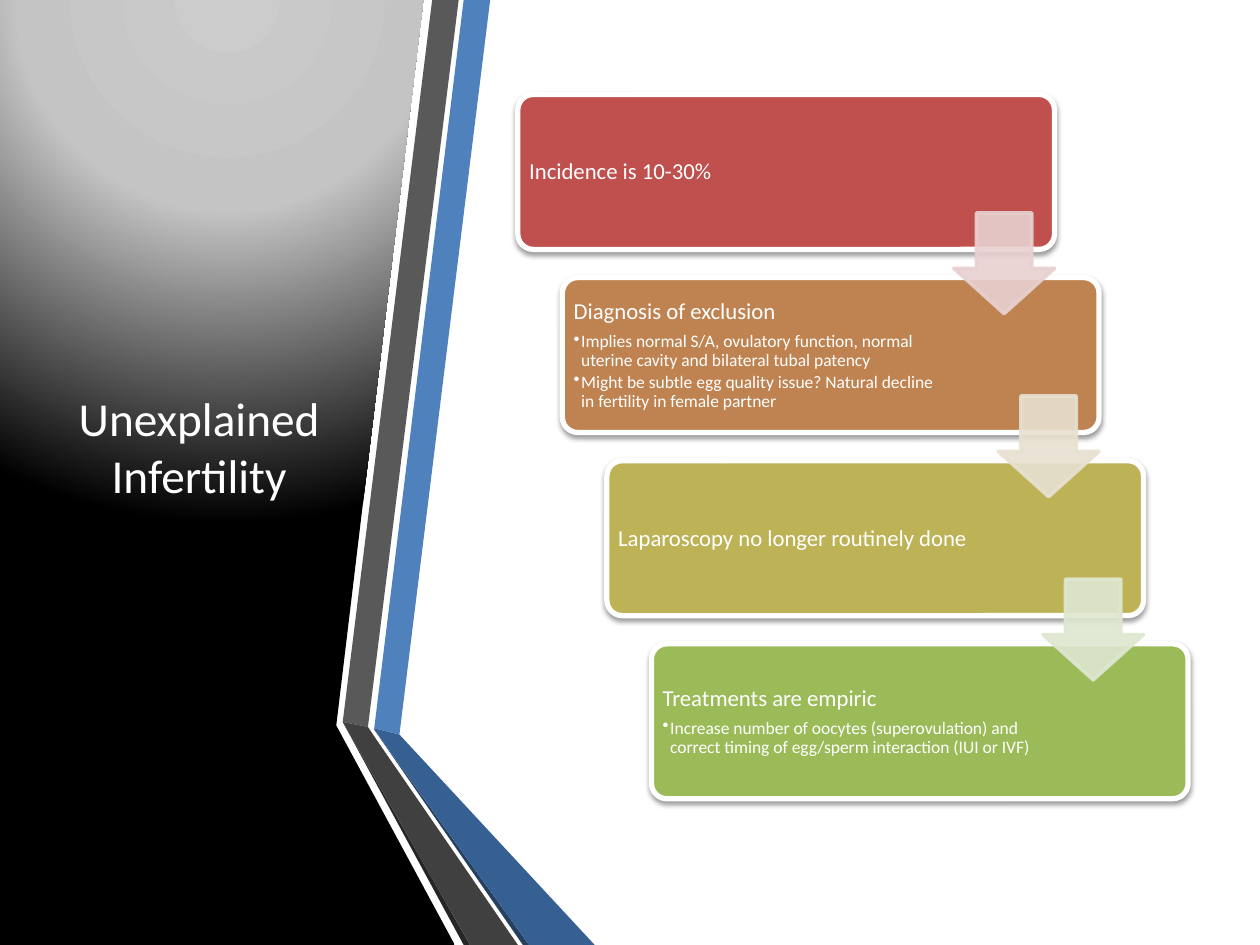
from dataclasses import dataclass

from lxml import etree
from pptx import Presentation
from pptx.dml.color import RGBColor
from pptx.enum.shapes import MSO_SHAPE
from pptx.enum.text import MSO_ANCHOR, MSO_AUTO_SIZE, PP_ALIGN
from pptx.oxml import parse_xml
from pptx.oxml.ns import nsdecls, qn
from pptx.util import Inches, Pt


@dataclass(frozen=True)
class Theme:
    font: str = "Calibri"
    white: str = "FFFFFF"
    blue: str = "4F81BD"
    blue_dark: str = "376092"
    blue_edge: str = "254061"
    gray: str = "595959"
    gray_dark: str = "404040"
    gray_edge: str = "262626"
    glow: tuple = ((0, "CCCCCC"), (40, "C4C4C4"), (100, "000000"))
    cards: tuple = ("C0504D", "BE8351", "BDB255", "9BBB59")
    arrows: tuple = ("E8D0D0", "E8E1D1", "DEE7D1")
    title_size: float = 27
    heading_size: float = 13
    bullet_size: float = 10


theme = Theme()
presentation = Presentation()
presentation.slide_width = Inches(10)
presentation.slide_height = Inches(7.5)
slide = presentation.slides.add_slide(presentation.slide_layouts[5])
shapes = slide.shapes


def add_outline(points, color):
    corners = [(Inches(x), Inches(y)) for x, y in points]
    builder = shapes.build_freeform(*corners[0])
    builder.add_line_segments(corners[1:], close=True)
    shape = builder.convert_to_shape()
    shape.shadow.inherit = False
    shape.fill.solid()
    shape.fill.fore_color.rgb = RGBColor.from_string(color)
    shape.line.fill.background()
    return shape


def format_runs(paragraph, size):
    for run in paragraph.runs:
        run.font.name = theme.font
        run.font.size = Pt(size)
        run.font.color.rgb = RGBColor.from_string(theme.white)


panel = add_outline(
    [(0, 0), (3.36, 0), (2.67, 5.75), (2.67, 5.76), (3.61, 7.5), (0, 7.5)],
    theme.white,
)
stops = "".join(
    f'<a:gs pos="{position * 1000}"><a:srgbClr val="{color}"/></a:gs>'
    for position, color in theme.glow
)
gradient = parse_xml(
    f'<a:gradFill {nsdecls("a")} rotWithShape="1"><a:gsLst>{stops}</a:gsLst>'
    '<a:path path="circle"><a:fillToRect l="50000" t="-80000" r="50000" b="180000"/>'
    "</a:path></a:gradFill>"
)
solid_fill = panel._element.spPr.find(qn("a:solidFill"))
solid_fill.getparent().replace(solid_fill, gradient)

ribbons = [
    ([(2.97, 5.78), (3.17, 5.83), (3.89, 0), (3.68, 0)], theme.blue),
    ([(3.64, 0), (3.43, 0), (2.72, 5.73), (2.92, 5.77)], theme.gray),
    ([(2.72, 5.73), (3.68, 7.5), (3.73, 7.5)], theme.gray_edge),
    ([(2.97, 5.79), (4.15, 7.5), (4.2, 7.5)], theme.blue_edge),
    ([(2.97, 5.79), (4.2, 7.5), (4.72, 7.5), (3.17, 5.83), (2.97, 5.78)], theme.blue_dark),
    ([(4.11, 7.5), (2.96, 5.83), (2.92, 5.77), (2.72, 5.73), (3.73, 7.5)], theme.gray_dark),
]
for points, color in ribbons:
    add_outline(points, color)

title = shapes.title
title.left, title.top = Inches(0.44), Inches(0.75)
title.width, title.height = Inches(2.28), Inches(5.58)
title_frame = title.text_frame
title_frame.text = "Unexplained Infertility"
title_frame.word_wrap = True
title_frame.auto_size = MSO_AUTO_SIZE.NONE
title_frame.vertical_anchor = MSO_ANCHOR.MIDDLE
title_frame.paragraphs[0].alignment = PP_ALIGN.CENTER
format_runs(title_frame.paragraphs[0], theme.title_size)
title._element.getparent().append(title._element)

cards = [
    (2.83, "Incidence is 10-30%", []),
    (3.03, "Diagnosis of exclusion", [
        "Implies normal S/A, ovulatory function, normal uterine cavity and bilateral tubal patency",
        "Might be subtle egg quality issue? Natural decline in fertility in female partner",
    ]),
    (3.04, "Laparoscopy no longer routinely done", []),
    (3.03, "Treatments are empiric", [
        "Increase number of oocytes (superovulation) and correct timing of "
        "egg/sperm interaction (IUI or IVF)",
    ]),
]
first_left, first_top = 4.11, 0.75
step_across = (5.17 - first_left) / 3
step_down = (5.11 - first_top) / 3
corners = [
    (first_left + step_across * index, first_top + step_down * index)
    for index in range(len(cards))
]

for (left, top), color, (text_width, heading, bullets) in zip(corners, theme.cards, cards):
    card = shapes.add_shape(
        MSO_SHAPE.ROUNDED_RECTANGLE, Inches(left), Inches(top), Inches(4.26), Inches(1.23)
    )
    card.adjustments[0] = 0.1
    card.fill.solid()
    card.fill.fore_color.rgb = RGBColor.from_string(color)
    card.line.color.rgb = RGBColor.from_string(theme.white)
    card.line.width = Pt(3)
    card.shadow.inherit = False
    card._element.spPr.find(qn("a:effectLst")).append(parse_xml(
        f'<a:outerShdw {nsdecls("a")} blurRad="{Pt(3.1)}" dist="{Pt(1.6)}" dir="5400000" '
        'rotWithShape="0"><a:srgbClr val="000000"><a:alpha val="38000"/></a:srgbClr>'
        "</a:outerShdw>"
    ))

    text_box = shapes.add_textbox(
        Inches(left + 0.04), Inches(top + 0.04), Inches(text_width), Inches(1.16)
    )
    frame = text_box.text_frame
    frame.word_wrap = True
    frame.vertical_anchor = MSO_ANCHOR.MIDDLE
    frame.margin_left = frame.margin_right = Inches(0.05)
    frame.margin_top = frame.margin_bottom = Inches(0.05)
    paragraph = frame.paragraphs[0]
    paragraph.text = heading
    paragraph.line_spacing = 0.9
    paragraph.space_after = Pt(4.5)
    format_runs(paragraph, theme.heading_size)
    for bullet in bullets:
        paragraph = frame.add_paragraph()
        paragraph.text = bullet
        paragraph.level = 1
        properties = paragraph._p.get_or_add_pPr()
        properties.set("marL", str(Inches(0.06)))
        properties.set("indent", str(Inches(-0.06)))
        etree.SubElement(properties, qn("a:buChar")).set("char", "•")
        paragraph.line_spacing = 0.9
        paragraph.space_after = Pt(1.5)
        format_runs(paragraph, theme.bullet_size)

for (left, top), color in zip(corners, theme.arrows):
    arrow = shapes.add_shape(
        MSO_SHAPE.DOWN_ARROW, Inches(left + 3.46), Inches(top + 0.94), Inches(0.8), Inches(0.8)
    )
    arrow.adjustments[0] = 0.55
    arrow.adjustments[1] = 0.45
    arrow.shadow.inherit = False
    arrow.fill.solid()
    arrow.fill.fore_color.rgb = RGBColor.from_string(color)
    arrow.line.color.rgb = RGBColor.from_string(color)
    arrow.line.width = Pt(2)
    for color_element in arrow._element.spPr.iter(qn("a:srgbClr")):
        etree.SubElement(color_element, qn("a:alpha")).set("val", "90000")

presentation.save("out.pptx")
